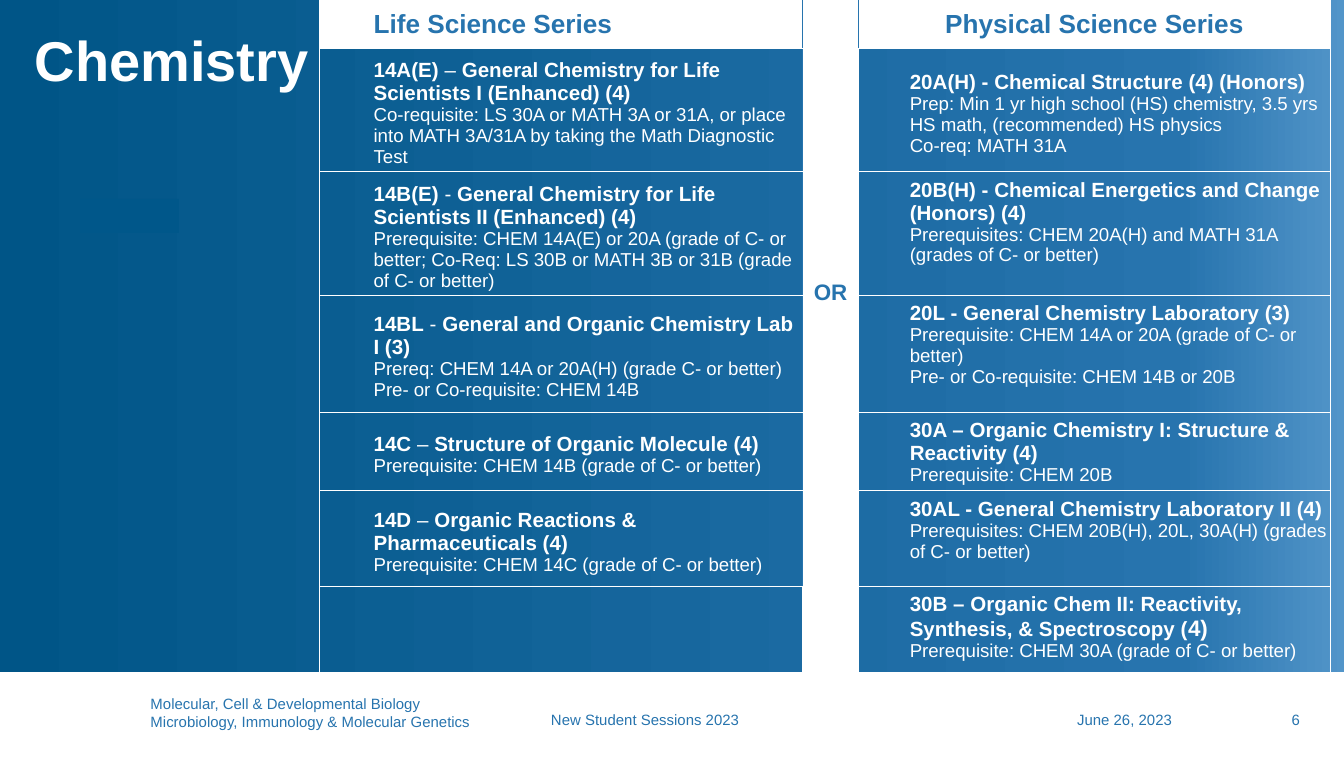
from copy import deepcopy

from lxml import etree
from pptx import Presentation
from pptx.dml.color import RGBColor
from pptx.enum.shapes import MSO_SHAPE
from pptx.enum.text import MSO_ANCHOR, MSO_AUTO_SIZE, PP_ALIGN
from pptx.oxml.ns import qn
from pptx.util import Inches, Pt

TOP, MIDDLE, BOTTOM = MSO_ANCHOR.TOP, MSO_ANCHOR.MIDDLE, MSO_ANCHOR.BOTTOM
LEFT, CENTER, RIGHT = PP_ALIGN.LEFT, PP_ALIGN.CENTER, PP_ALIGN.RIGHT
RECTANGLE = MSO_SHAPE.RECTANGLE
FIT_SHAPE = MSO_AUTO_SIZE.SHAPE_TO_FIT_TEXT

FONT = "Arial"
WHITE = RGBColor(0xFF, 0xFF, 0xFF)
BLUE = RGBColor(0x27, 0x74, 0xAE)
DARK_BLUE = RGBColor(0x00, 0x55, 0x87)
LIGHT_BLUE = RGBColor(0x52, 0x95, 0xC9)
PATCH_BLUE = RGBColor(0x00, 0x57, 0x8A)

COLUMN_WIDTHS = [3.59, 0.42, 3.51]
ROW_HEIGHTS = [0.36, 0.87, 0.87, 0.87, 0.56, 0.71, 0.76]

LIFE_COURSES = [
    (["14A(E)", " – ", "General Chemistry for Life Scientists I (Enhanced) (4)"],
     ["Co-requisite: LS 30A or MATH 3A or 31A, or place into MATH 3A/31A "
      "by taking the Math Diagnostic Test"]),
    (["14B(E)", " - ", "General Chemistry for Life Scientists II (Enhanced) (4)"],
     ["Prerequisite: CHEM 14A(E) or 20A (grade of C- or better; "
      "Co-Req: LS 30B or MATH 3B or 31B (grade of C- or better)"]),
    (["14BL", " - ", "General and Organic Chemistry Lab I (3)"],
     ["Prereq: CHEM 14A or 20A(H) (grade C- or better)",
      "Pre- or Co-requisite: CHEM 14B"]),
    (["14C", " – ", "Structure of Organic Molecule (4)"],
     ["Prerequisite: CHEM 14B (grade of C- or better)"]),
    (["14D", " – ", "Organic Reactions & Pharmaceuticals (4)"],
     ["Prerequisite: CHEM 14C (grade of C- or better)"]),
]

PHYSICAL_COURSES = [
    (["20A(H) - Chemical Structure (4) (Honors)"],
     ["Prep: Min 1 yr high school (HS) chemistry, 3.5 yrs HS math, "
      "(recommended) HS physics",
      "Co-req: MATH 31A"]),
    (["20B(H) - Chemical Energetics and Change (Honors) (4)"],
     ["Prerequisites: CHEM 20A(H) and MATH 31A (grades of C- or better)"]),
    (["20L - General Chemistry Laboratory (3)"],
     ["Prerequisite: CHEM 14A or 20A (grade of C- or better)",
      "Pre- or Co-requisite: CHEM 14B or 20B"]),
    (["30A – Organic Chemistry I: Structure & Reactivity (4)"],
     ["Prerequisite: CHEM 20B"]),
    (["30AL - General Chemistry Laboratory II (4)"],
     ["Prerequisites: CHEM 20B(H), 20L, 30A(H) (grades of C- or better)"]),
    (["30B – Organic Chem II: Reactivity, Synthesis, & Spectroscopy (", "4)"],
     ["Prerequisite: CHEM 30A (grade of C- or better)"]),
]


def style(font, size, color, bold=False):
    font.name = FONT
    font.size = Pt(size)
    font.bold = bold
    font.color.rgb = color


def paint_background(slide):
    fill = slide.background.fill
    fill.gradient()
    fill.gradient_angle = 0
    stop_list = slide.element.find(".//" + qn("a:gsLst"))
    stop_list.insert(1, deepcopy(stop_list[0]))
    stops = [(0, DARK_BLUE), (0.88, BLUE), (1, LIGHT_BLUE)]
    for stop, (position, color) in zip(fill.gradient_stops, stops):
        stop.position = position
        stop.color.rgb = color


def add_panel(slide, left, top, width, height, color):
    panel = slide.shapes.add_shape(
        RECTANGLE, Inches(left), Inches(top), Inches(width), Inches(height))
    panel.shadow.inherit = False
    panel.fill.solid()
    panel.fill.fore_color.rgb = color
    panel.line.color.rgb = color
    panel.line.width = Pt(0.5)
    return panel


def add_text(slide, left, top, width, height, text, size, color, bold=False,
             align=LEFT, anchor=BOTTOM, inset=0.0, padding=0.01):
    box = slide.shapes.add_textbox(
        Inches(left), Inches(top), Inches(width), Inches(height))
    frame = box.text_frame
    frame.text = text
    frame.word_wrap = True
    frame.auto_size = FIT_SHAPE
    frame.vertical_anchor = anchor
    frame.margin_left, frame.margin_right = Inches(inset), Inches(0.1)
    frame.margin_top = frame.margin_bottom = Inches(padding)
    for paragraph in frame.paragraphs:
        paragraph.alignment = align
        style(paragraph.font, size, color, bold)
    return frame


def set_borders(cell, left=WHITE, right=WHITE):
    properties = cell._tc.get_or_add_tcPr()
    sides = {"a:lnL": left, "a:lnR": right, "a:lnT": WHITE, "a:lnB": WHITE}
    for side, color in sides.items():
        line = etree.SubElement(properties, qn(side), w=str(Pt(0.5)))
        solid = etree.SubElement(line, qn("a:solidFill"))
        etree.SubElement(solid, qn("a:srgbClr"), val=str(color))


def set_margins(cell, left, top):
    cell.margin_left, cell.margin_top = Inches(left), Inches(top)
    cell.margin_right = cell.margin_bottom = 0


def fill_header(cell, text, size, align=CENTER, inset=0.0):
    set_margins(cell, inset, 0)
    cell.vertical_anchor = MIDDLE
    cell.text_frame.text = text
    paragraph = cell.text_frame.paragraphs[0]
    paragraph.alignment = align
    style(paragraph.runs[0].font, size, BLUE, True)


def fill_course(cell, course, inset=0.0, indent=0.0, anchor=MIDDLE):
    title_parts, notes = course
    set_margins(cell, inset, 0.05)
    cell.vertical_anchor = anchor
    frame = cell.text_frame
    title = frame.paragraphs[0]
    for part in title_parts:
        run = title.add_run()
        run.text = part
        size = 12 if part == "4)" else 11
        style(run.font, size, WHITE, part.strip() not in ("-", "–"))
    for note in notes:
        paragraph = frame.add_paragraph()
        paragraph.text = note
        style(paragraph.runs[0].font, 10, WHITE)
    if indent:
        for paragraph in frame.paragraphs:
            paragraph.level = 1
            properties = paragraph._p.get_or_add_pPr()
            properties.set("marL", str(Inches(indent)))
            properties.set("indent", "0")


def add_course_table(slide):
    table = slide.shapes.add_table(
        len(ROW_HEIGHTS), len(COLUMN_WIDTHS), Inches(2.38), 0,
        Inches(sum(COLUMN_WIDTHS)), Inches(sum(ROW_HEIGHTS))).table
    table.first_row = table.horz_banding = False
    for column, width in zip(table.columns, COLUMN_WIDTHS):
        column.width = Inches(width)
    for row, height in zip(table.rows, ROW_HEIGHTS):
        row.height = Inches(height)

    header_edges = [(WHITE, BLUE), (BLUE, BLUE), (BLUE, WHITE)]
    for row in range(len(ROW_HEIGHTS)):
        for column in range(len(COLUMN_WIDTHS)):
            cell = table.cell(row, column)
            edges = header_edges[column] if row == 0 else (WHITE, WHITE)
            set_borders(cell, *edges)
            if row == 0 or column == 1:
                cell.fill.solid()
                cell.fill.fore_color.rgb = WHITE
            else:
                cell.fill.background()

    table.cell(0, 1).merge(table.cell(5, 1))
    fill_header(table.cell(0, 0), "Life Science Series", 14, LEFT, 0.4)
    fill_header(table.cell(0, 1), "OR", 12)
    fill_header(table.cell(0, 2), "Physical Science Series", 14)
    for row, course in enumerate(LIFE_COURSES, 1):
        fill_course(table.cell(row, 0), course, inset=0.4)
    for row, course in enumerate(PHYSICAL_COURSES, 1):
        fill_course(table.cell(row, 2), course, indent=0.38,
                    anchor=MIDDLE if row == 1 else TOP)


def main():
    deck = Presentation()
    deck.slide_width, deck.slide_height = Inches(10), Inches(5.63)
    slide = deck.slides.add_slide(deck.slide_layouts[6])
    paint_background(slide)

    footer_band = add_panel(slide, 0, 5, 10, 0.63, WHITE)
    footer_band.line.fill.background()
    departments = ("Molecular, Cell & Developmental Biology\n"
                   "Microbiology, Immunology & Molecular Genetics")
    add_text(slide, 1.12, 5.16, 2.9, 0.28, departments, 8, BLUE)
    add_text(slide, 4.1, 5.28, 3.2, 0.15, "New Student Sessions 2023", 8, BLUE)
    add_text(slide, 7.32, 5.28, 1.5, 0.15, "June 26, 2023", 8, BLUE,
             align=RIGHT, inset=0.1)
    add_text(slide, 8.9, 5.28, 0.87, 0.15, "6", 8, BLUE, align=RIGHT, inset=0.1)

    title = add_text(slide, 0.16, 0.2, 8, 0.56, "Chemistry", 30, WHITE, True,
                     anchor=TOP, inset=0.1, padding=0.05)
    title.paragraphs[0].line_spacing = 0.9
    add_course_table(slide)
    add_panel(slide, 0.6, 1.48, 0.73, 0.25, PATCH_BLUE)
    deck.save("out.pptx")


if __name__ == "__main__":
    main()
